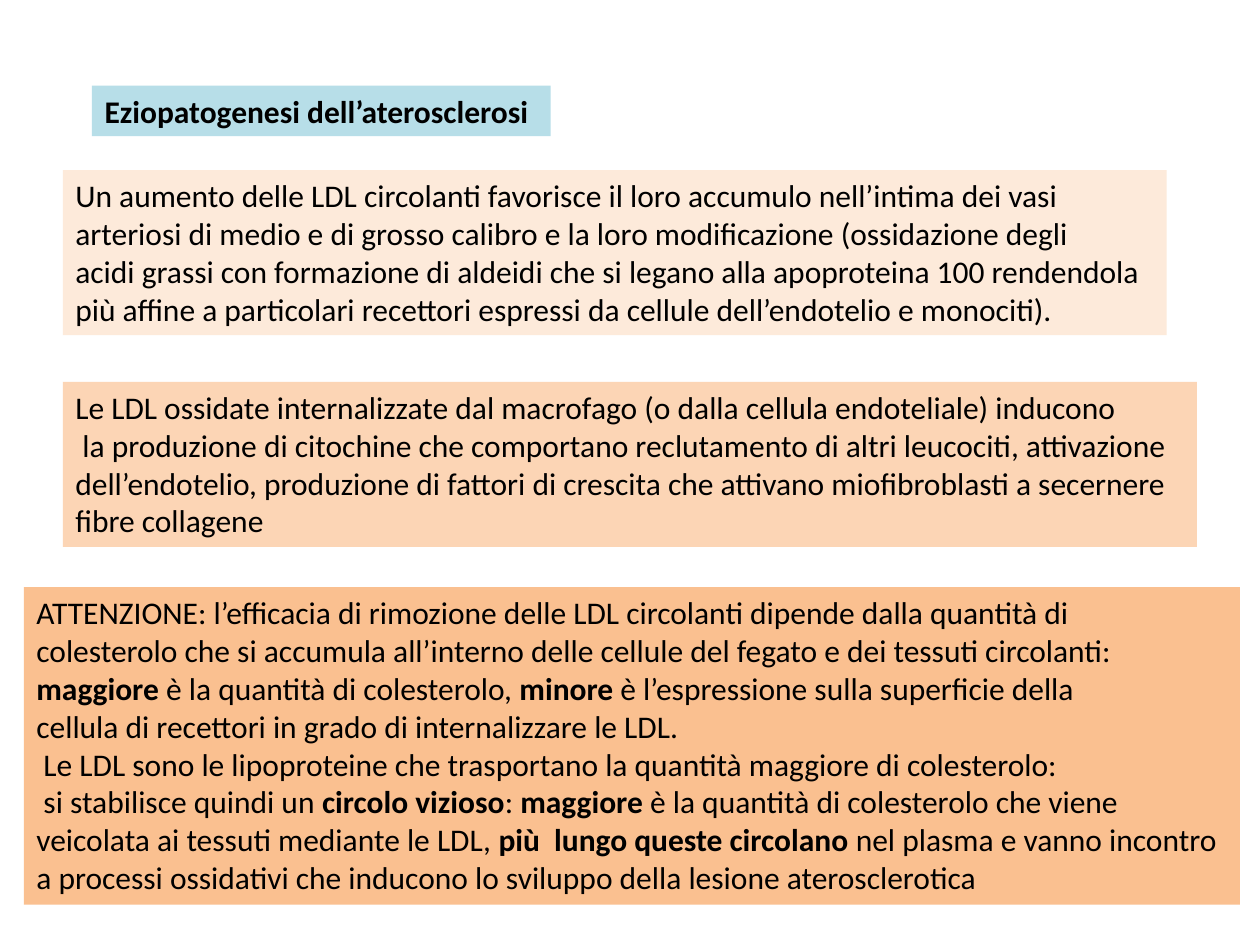
from dataclasses import dataclass

from pptx import Presentation
from pptx.dml.color import RGBColor
from pptx.enum.text import MSO_ANCHOR, MSO_AUTO_SIZE, PP_ALIGN
from pptx.util import Inches, Pt

BOLD_MARK = "**"


@dataclass(frozen=True)
class Panel:
    left: float
    top: float
    width: float
    height: float
    fill: str
    lines: tuple[str, ...]


TITLE = Panel(0.73, 0.68, 3.64, 0.4, "B7DEE8", ("**Eziopatogenesi dell’aterosclerosi**",))

PANELS = (
    Panel(0.5, 1.35, 8.76, 1.31, "FDEADA", (
        "Un aumento delle LDL circolanti favorisce il loro accumulo nell’intima dei vasi",
        "arteriosi di medio e di grosso calibro e la loro modificazione (ossidazione degli",
        "acidi grassi con formazione di aldeidi che si legano alla apoproteina 100 rendendola",
        "più affine a particolari recettori espressi da cellule dell’endotelio e monociti).",
    )),
    Panel(0.5, 3.03, 9, 1.31, "FCD5B5", (
        "Le LDL ossidate internalizzate dal macrofago (o dalla cellula endoteliale) inducono",
        " la produzione di citochine che comportano reclutamento di altri leucociti, attivazione",
        "dell’endotelio, produzione di fattori di crescita che attivano miofibroblasti a secernere",
        "fibre collagene",
    )),
    Panel(0.19, 4.66, 9.65, 2.52, "FAC090", (
        "ATTENZIONE: l’efficacia di rimozione delle LDL circolanti dipende dalla quantità di",
        "colesterolo che si accumula all’interno delle cellule del fegato e dei tessuti circolanti:",
        "**maggiore** è la quantità di colesterolo, **minore** è l’espressione sulla superficie della",
        "cellula di recettori in grado di internalizzare le LDL.",
        " Le LDL sono le lipoproteine che trasportano la quantità maggiore di colesterolo:",
        " si stabilisce quindi un **circolo vizioso**: **maggiore** è la quantità di colesterolo che viene",
        "veicolata ai tessuti mediante le LDL, **più  lungo queste circolano** nel plasma e vanno incontro",
        "a processi ossidativi che inducono lo sviluppo della lesione aterosclerotica",
    )),
)


def set_color(color_format, color: str) -> None:
    color_format.rgb = RGBColor.from_string(color)


def write_line(paragraph, text: str, *, size: float = 18, font: str = "Calibri",
               color: str = "000000", alignment: PP_ALIGN = PP_ALIGN.LEFT) -> None:
    paragraph.alignment = alignment
    for index, part in enumerate(text.split(BOLD_MARK)):
        if part:
            run = paragraph.add_run()
            run.text = part
            run.font.name = font
            run.font.size = Pt(size)
            run.font.bold = index % 2 == 1
            set_color(run.font.color, color)


def format_panel(shape, panel: Panel) -> None:
    shape.left, shape.top = Inches(panel.left), Inches(panel.top)
    shape.width, shape.height = Inches(panel.width), Inches(panel.height)
    shape.fill.solid()
    set_color(shape.fill.fore_color, panel.fill)
    frame = shape.text_frame
    frame.word_wrap = True
    frame.auto_size = MSO_AUTO_SIZE.NONE
    frame.vertical_anchor = MSO_ANCHOR.TOP
    for index, line in enumerate(panel.lines):
        paragraph = frame.add_paragraph() if index else frame.paragraphs[0]
        write_line(paragraph, line)


def main() -> None:
    presentation = Presentation()
    presentation.slide_width, presentation.slide_height = Inches(10), Inches(7.5)
    slide = presentation.slides.add_slide(presentation.slide_layouts.get_by_name("Title Only"))
    format_panel(slide.shapes.title, TITLE)
    for panel in PANELS:
        format_panel(slide.shapes.add_textbox(0, 0, 0, 0), panel)
    presentation.save("out.pptx")


if __name__ == "__main__":
    main()
